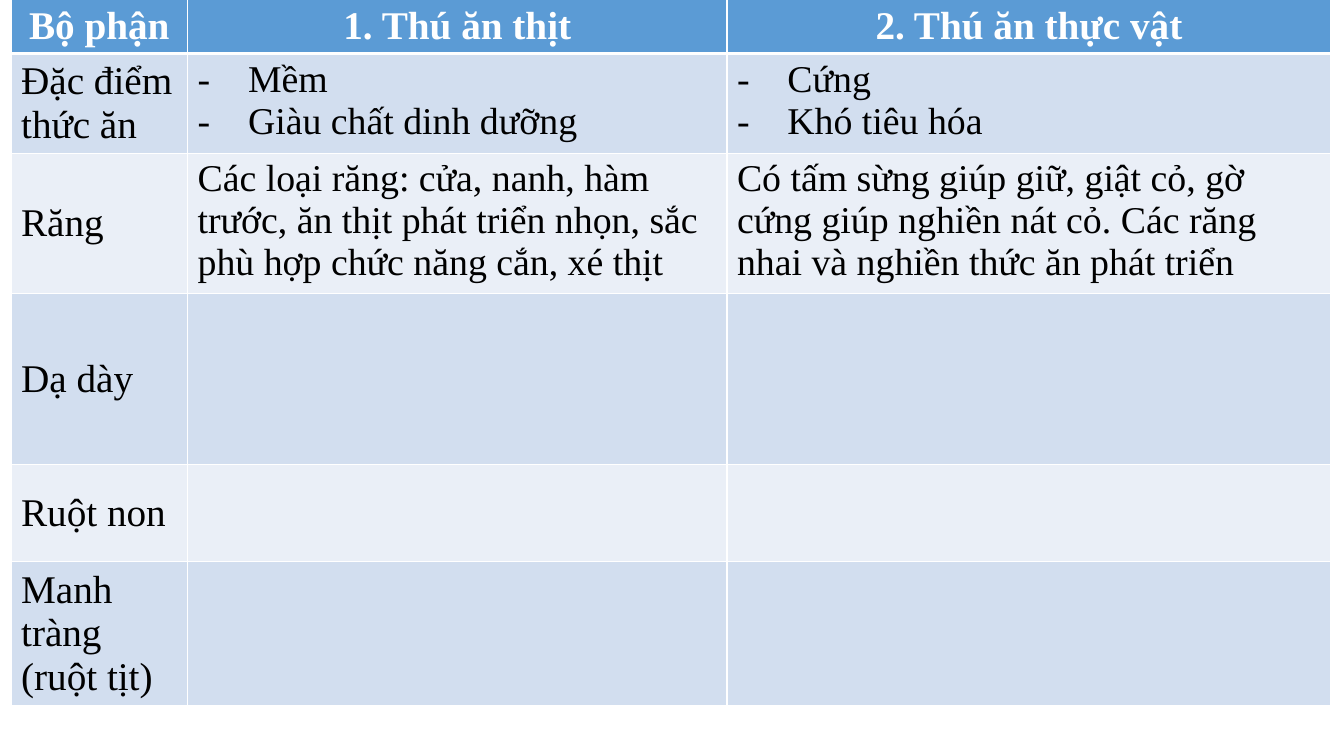
"""Builds a slide with a table comparing the digestion of carnivores and herbivores."""
from lxml.etree import SubElement
from pptx import Presentation
from pptx.dml.color import RGBColor
from pptx.enum.text import MSO_ANCHOR, PP_ALIGN
from pptx.oxml.ns import qn
from pptx.util import Inches, Pt

HEADER_BLUE = RGBColor(0x5B, 0x9B, 0xD5)
BAND_DARK = RGBColor(0xD2, 0xDE, 0xEF)
BAND_LIGHT = RGBColor(0xEA, 0xEF, 0xF7)
WHITE = RGBColor(0xFF, 0xFF, 0xFF)
BLACK = RGBColor(0x00, 0x00, 0x00)

COLUMN_WIDTHS = [1.75, 5.35, 5.99]
ROW_HEIGHTS = [0.54, 0.99, 1.39, 1.7, 0.96, 1.43]
FOOD_ROW = 1
ROWS = [
    ["Bộ phận", "1. Thú ăn thịt", "2. Thú ăn thực vật"],
    ["Đặc điểm thức ăn", "Mềm\nGiàu chất dinh dưỡng", "Cứng\nKhó tiêu hóa"],
    [
        "Răng",
        "Các loại răng: cửa, nanh, hàm trước, ăn thịt phát triển nhọn, sắc phù hợp chức năng cắn, xé thịt",
        "Có tấm sừng giúp giữ, giật cỏ, gờ cứng giúp nghiền nát cỏ. Các răng nhai và nghiền thức ăn phát triển",
    ],
    ["Dạ dày", "", ""],
    ["Ruột non", "", ""],
    ["Manh tràng (ruột tịt)", "", ""],
]


def add_border(cell, side, points):
    line = SubElement(cell._tc.get_or_add_tcPr(), qn(f"a:ln{side}"), w=str(Pt(points)))
    fill = SubElement(line, qn("a:solidFill"))
    SubElement(fill, qn("a:srgbClr"), val=str(WHITE))


def add_dash(paragraph):
    properties = paragraph._p.get_or_add_pPr()
    properties.set("marL", str(Inches(0.5)))
    properties.set("indent", str(Inches(-0.5)))
    SubElement(properties, qn("a:buFont"), typeface="Times New Roman")
    SubElement(properties, qn("a:buChar"), char="-")


presentation = Presentation()
presentation.slide_width = Inches(13.33)
presentation.slide_height = Inches(7.5)
slide = presentation.slides.add_slide(presentation.slide_layouts[6])

table = slide.shapes.add_table(
    len(ROWS), len(COLUMN_WIDTHS), Inches(0.11), Inches(-0.01),
    Inches(sum(COLUMN_WIDTHS)), Inches(sum(ROW_HEIGHTS)),
).table
for column, width in zip(table.columns, COLUMN_WIDTHS):
    column.width = Inches(width)
for row, height in zip(table.rows, ROW_HEIGHTS):
    row.height = Inches(height)

for row_index, texts in enumerate(ROWS):
    is_header = row_index == 0
    band = BAND_DARK if row_index % 2 else BAND_LIGHT
    for column_index, text in enumerate(texts):
        is_label = is_header or column_index == 0
        cell = table.cell(row_index, column_index)
        for side in "LRTB":
            under_header = (row_index, side) in [(0, "B"), (1, "T")]
            add_border(cell, side, 3 if under_header else 1)
        cell.fill.solid()
        cell.fill.fore_color.rgb = HEADER_BLUE if is_header else band
        cell.vertical_anchor = MSO_ANCHOR.MIDDLE if is_label else MSO_ANCHOR.TOP
        cell.text_frame.text = text
        for paragraph in cell.text_frame.paragraphs:
            if is_header:
                paragraph.alignment = PP_ALIGN.CENTER
            if row_index == FOOD_ROW and not is_label:
                add_dash(paragraph)
            for run in paragraph.runs:
                run.font.name = "Times New Roman"
                run.font.size = Pt(28 if is_label else 27)
                run.font.bold = is_header
                run.font.color.rgb = WHITE if is_header else BLACK

presentation.save("out.pptx")
